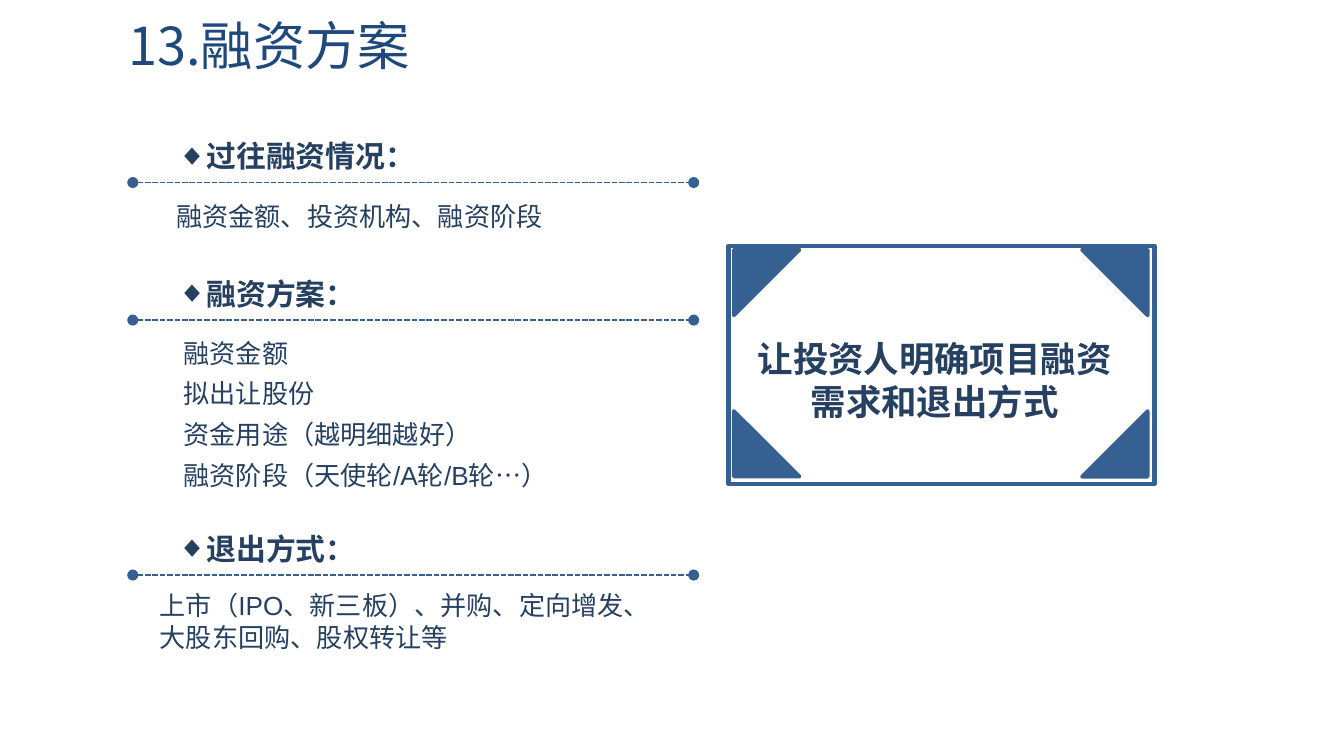
import lxml.etree
import pptx
import pptx.dml.color
import pptx.enum.dml
import pptx.enum.shapes
import pptx.enum.text
import pptx.oxml.ns
import pptx.util

Cm = pptx.util.Cm
Pt = pptx.util.Pt
Align = pptx.enum.text.PP_ALIGN
Anchor = pptx.enum.text.MSO_ANCHOR
Shape = pptx.enum.shapes.MSO_SHAPE

COLORS = {"title": "1F497D", "text": "254061", "accent": "376092"}
FORMATS = {
    "title": {"size": Pt(28), "name": "Noto Sans CJK JP"},
    "heading": {"size": Pt(16), "name": "Arial", "bold": True},
    "body": {"size": Pt(14), "name": "Arial"},
    "callout": {"size": Pt(19), "name": "Times New Roman", "bold": True},
}


def rgb(name):
    return pptx.dml.color.RGBColor.from_string(COLORS[name])


def add_xml(parent, tag, **attributes):
    return lxml.etree.SubElement(parent, pptx.oxml.ns.qn(tag), attributes)


class SlideBuilder:
    def __init__(self, slide):
        self.slide = slide

    def text(self, area, lines, style, color="text", anchor=Anchor.TOP,
             indent=None, bullet=None, **layout):
        """Write one paragraph per line; layout holds paragraph attributes."""
        box = self.slide.shapes.add_textbox(*map(Cm, area))
        frame = box.text_frame
        frame.word_wrap = True
        frame.vertical_anchor = anchor
        for index, line in enumerate(lines):
            para = frame.paragraphs[0] if index == 0 else frame.add_paragraph()
            for name, value in layout.items():
                setattr(para, name, value)
            properties = para._p.get_or_add_pPr()
            if indent:
                properties.set("marL", "0")
                properties.set("indent", str(Cm(indent)))
            if bullet:
                add_xml(properties, "a:buFont", typeface="Arial")
                add_xml(properties, "a:buChar", char=bullet)
            span = para.add_run()
            span.text = line
            for name, value in FORMATS[style].items():
                setattr(span.font, name, value)
            span.font.color.rgb = rgb(color)

    def shape(self, kind, area, line_width, filled=True, rotation=0):
        shape = self.slide.shapes.add_shape(kind, *map(Cm, area))
        shape.shadow.inherit = False
        shape.rotation = rotation
        if filled:
            shape.fill.solid()
            shape.fill.fore_color.rgb = rgb("accent")
        else:
            shape.fill.background()
        shape.line.color.rgb = rgb("accent")
        shape.line.width = Pt(line_width)

    def dotted_rule(self, left, right, y):
        """Draw a dashed horizontal line with a round dot at each end."""
        rule = self.slide.shapes.add_connector(
            pptx.enum.shapes.MSO_CONNECTOR.STRAIGHT,
            Cm(left), Cm(y), Cm(right), Cm(y))
        rule.line.color.rgb = rgb("accent")
        rule.line.width = Pt(1)
        rule.line.dash_style = pptx.enum.dml.MSO_LINE.SQUARE_DOT
        properties = rule._element.spPr
        line = properties.find(pptx.oxml.ns.qn("a:ln"))
        for end in ("a:headEnd", "a:tailEnd"):
            add_xml(line, end, type="oval")
        add_xml(properties, "a:effectLst")

    def section(self, y, heading, body_area, lines, **layout):
        self.text((2.59, y - 1.17, 9.65, 1.07), [heading], "heading",
                  indent=0.51, bullet="◆", **JUSTIFIED)
        self.text(body_area, lines, "body", **layout)
        self.dotted_rule(2.51, 13.11, y)


JUSTIFIED = {"alignment": Align.JUSTIFY, "line_spacing": 1.3}


def main():
    deck = pptx.Presentation()
    deck.slide_width, deck.slide_height = Cm(25.4), Cm(14.29)
    page = SlideBuilder(deck.slides.add_slide(deck.slide_layouts[6]))

    page.text((2.18, 0.05, 9.37, 1.6), ["13.融资方案"], "title",
              color="title", anchor=Anchor.MIDDLE)

    page.shape(Shape.FLOWCHART_PROCESS, (13.77, 4.65, 8.05, 4.5), 2.25,
               filled=False)
    left, right, top, bottom = 13.87, 20.45, 4.72, 7.77
    corners = [(left, bottom), (left, top), (right, top), (right, bottom)]
    for turn, corner in enumerate(corners):
        page.shape(Shape.RIGHT_TRIANGLE, (*corner, 1.24, 1.24), 2,
                   rotation=90 * turn)
    page.text((14.07, 6.25, 7.19, 1.88), ["让投资人明确项目融资需求和退出方式"],
              "callout", alignment=Align.CENTER)

    page.section(3.45, "过往融资情况：", (2.57, 3.48, 9.75, 0.97),
                 ["融资金额、投资机构、融资阶段"], indent=0.51, **JUSTIFIED)
    page.section(6.05, "融资方案：", (2.59, 6.07, 9.75, 3.38),
                 ["融资金额", "拟出让股份", "资金用途（越明细越好）",
                  "融资阶段（天使轮/A轮/B轮…）"], indent=0.63, **JUSTIFIED)
    page.section(10.87, "退出方式：", (2.77, 11.02, 10.19, 1.45),
                 ["上市（IPO、新三板）、并购、定向增发、大股东回购、股权转让等"])

    deck.save("out.pptx")


if __name__ == "__main__":
    main()
